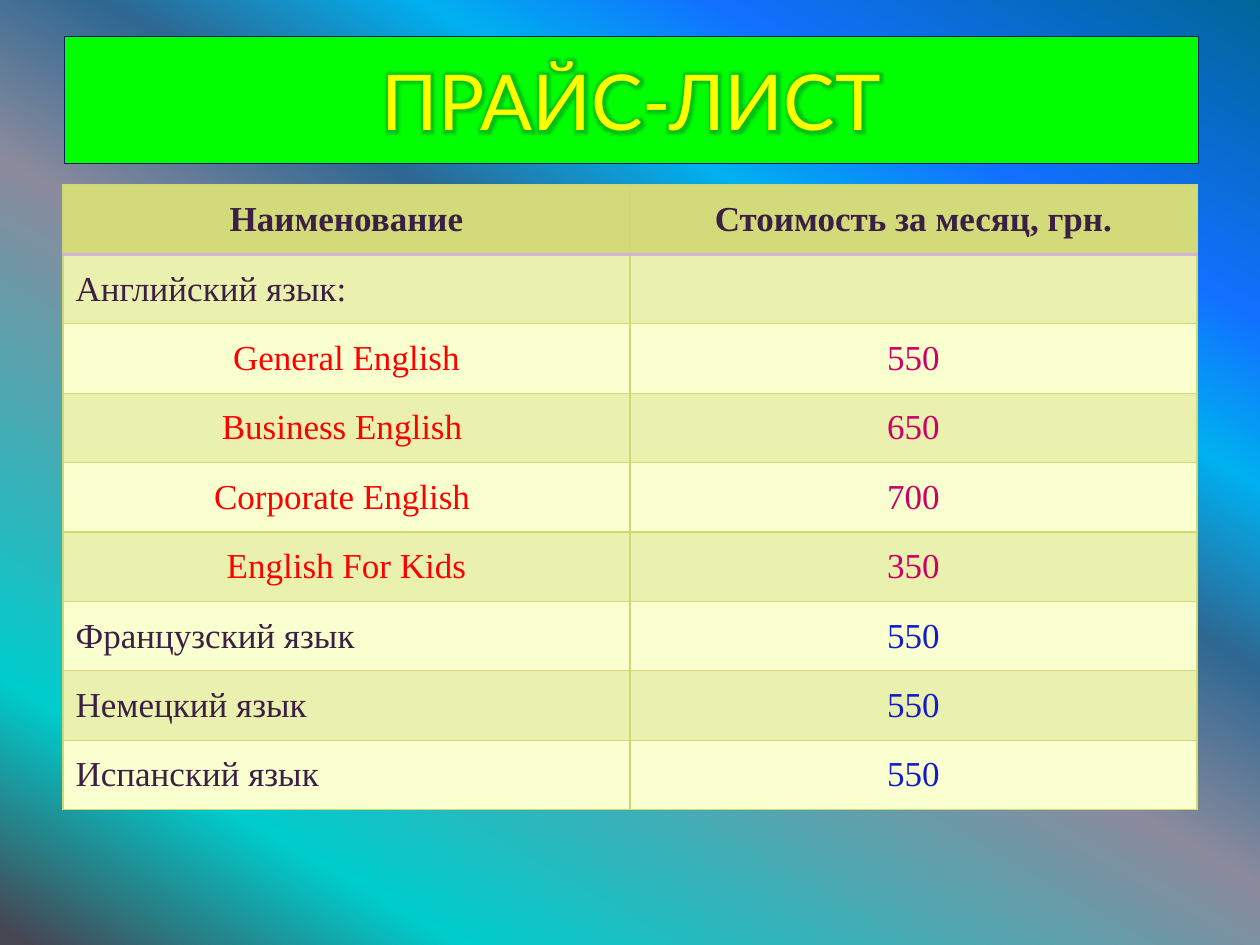
"""Build a price-list slide for language courses."""
import lxml.etree
import pptx
import pptx.dml.color
import pptx.enum.shapes
import pptx.enum.text
import pptx.oxml
import pptx.oxml.ns
import pptx.util

TITLE = "ПРАЙС-ЛИСТ"
HEADER = ("Наименование", "Стоимость за месяц, грн.")
PRICES = [
    ("heading", "Английский язык:", ""),
    ("course", "General English", "550"),
    ("course", "Business English ", "650"),
    ("course", "Corporate English ", "700"),
    ("course", "English For Kids", "350"),
    ("language", "Французский язык", "550"),
    ("language", "Немецкий язык", "550"),
    ("language", "Испанский язык", "550"),
]
THEME = {
    "background": [(1, "464653"), (16, "00CCCC"), (47, "8B8B9D"), (60, "2E6792"),
                   (71, "00B0F0"), (81, "1170FF"), (100, "006699")],
    "background_angle": 60,
    "title": {"font": "Lato", "size": 44, "color": "FFFF00"},
    "title_fill": "00FF00",
    "title_line": "002060",
    "title_glow": "006633",
    "table_font": "Times New Roman",
    "table_size": 20,
    "text": "3C1F44",
    "header_fill": "D2DA7A",
    "bands": ("EAF0AD", "FAFFCF"),
    "border": ("CFD875", 0.75),
    "header_rule": ("D3B3DC", 2),
    "name_colors": {"heading": "3C1F44", "course": "FF0000", "language": "3C1F44"},
    "price_colors": {"heading": "3C1F44", "course": "CC0066", "language": "131CC7"},
}
TITLE_BOX = (1.3, 0.74, 22.86, 2.56)
TABLE_LEFT, TABLE_TOP, TABLE_WIDTH, ROW_HEIGHT = 1.27, 3.73, 22.86, 1.4

Cm = pptx.util.Cm
CENTER = pptx.enum.text.PP_ALIGN.CENTER
LEFT = pptx.enum.text.PP_ALIGN.LEFT
MIDDLE = pptx.enum.text.MSO_ANCHOR.MIDDLE
NAMESPACE = pptx.oxml.ns.nsdecls("a")
rgb = pptx.dml.color.RGBColor.from_string


def paint_background(slide):
    fill = slide.background.fill
    fill.gradient()
    fill.gradient_angle = THEME["background_angle"]
    stops = slide.element.find(".//" + pptx.oxml.ns.qn("a:gsLst"))
    for stop in list(stops):
        stops.remove(stop)
    for percent, color in THEME["background"]:
        stops.append(pptx.oxml.parse_xml(
            f'<a:gs {NAMESPACE} pos="{percent * 1000}"><a:srgbClr val="{color}"/></a:gs>'))


def add_text(text_frame, text, font, size, color, alignment=CENTER, bold=False):
    paragraph = text_frame.paragraphs[0]
    paragraph.alignment = alignment
    run = paragraph.add_run()
    run.text = text
    run.font.size = pptx.util.Pt(size)
    run.font.bold = bold
    run.font.color.rgb = rgb(color)
    run.font.name = font
    return run


def add_title(slide):
    shape = slide.shapes.add_shape(
        pptx.enum.shapes.MSO_SHAPE.RECTANGLE, *map(Cm, TITLE_BOX))
    shape.shadow.inherit = False
    shape.fill.solid()
    shape.fill.fore_color.rgb = rgb(THEME["title_fill"])
    shape.line.color.rgb = rgb(THEME["title_line"])
    shape.line.width = pptx.util.Pt(0.75)
    shape.text_frame.vertical_anchor = MIDDLE
    run = add_text(shape.text_frame, TITLE, **THEME["title"])
    properties = run.font.color and run._r.get_or_add_rPr()
    properties.find(pptx.oxml.ns.qn("a:solidFill")).addnext(pptx.oxml.parse_xml(
        f'<a:effectLst {NAMESPACE}><a:glow rad="101600"><a:srgbClr val="{THEME["title_glow"]}">'
        '<a:alpha val="40000"/></a:srgbClr></a:glow></a:effectLst>'))


def style_cell(cell, fill, borders):
    properties = cell._tc.get_or_add_tcPr()
    for side, (color, points) in borders.items():
        properties.append(pptx.oxml.parse_xml(
            f'<a:ln{side} {NAMESPACE} w="{int(points * 12700)}"><a:solidFill>'
            f'<a:srgbClr val="{color}"/></a:solidFill></a:ln{side}>'))
    cell.fill.solid()
    cell.fill.fore_color.rgb = rgb(fill)
    cell.vertical_anchor = MIDDLE


def add_price_table(slide):
    row_count = len(PRICES) + 1
    table = slide.shapes.add_table(
        row_count, 2, Cm(TABLE_LEFT), Cm(TABLE_TOP),
        Cm(TABLE_WIDTH), Cm(ROW_HEIGHT * row_count)).table
    for row in table.rows:
        row.height = Cm(ROW_HEIGHT)
    font, size = THEME["table_font"], THEME["table_size"]
    edges = dict.fromkeys("LRTB", THEME["border"])

    for column, text in enumerate(HEADER):
        cell = table.cell(0, column)
        style_cell(cell, THEME["header_fill"], {**edges, "B": THEME["header_rule"]})
        add_text(cell.text_frame, text, font, size, THEME["text"], bold=True)

    for index, (kind, name, price) in enumerate(PRICES):
        borders = {**edges, "T": THEME["header_rule"]} if index == 0 else edges
        name_alignment = CENTER if kind == "course" else LEFT
        entries = ((name, THEME["name_colors"][kind], name_alignment),
                   (price, THEME["price_colors"][kind], CENTER))
        for column, (text, color, alignment) in enumerate(entries):
            cell = table.cell(index + 1, column)
            style_cell(cell, THEME["bands"][index % 2], borders)
            if text:
                add_text(cell.text_frame, text, font, size, color, alignment)


def main():
    presentation = pptx.Presentation()
    presentation.slide_width, presentation.slide_height = Cm(25.4), Cm(19.05)
    slide = presentation.slides.add_slide(presentation.slide_layouts[6])
    paint_background(slide)
    add_title(slide)
    add_price_table(slide)
    presentation.save("out.pptx")


if __name__ == "__main__":
    main()
